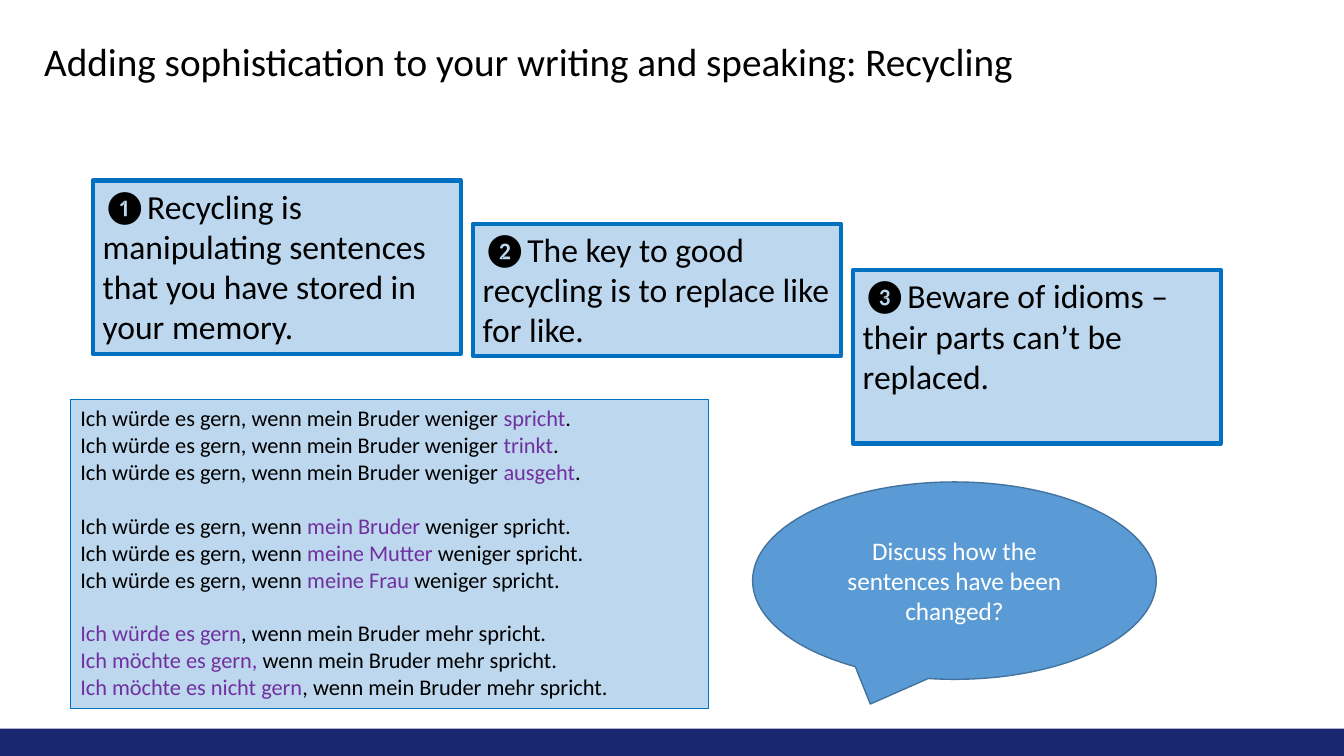
from pptx import Presentation
from pptx.dml.color import RGBColor
from pptx.enum import shapes, text
from pptx.util import Pt

COLORS = {"navy": "192771", "pale": "BDD7EE", "border": "0070C0", "bubble": "5B9BD5",
          "bubble_line": "43739E", "black": "000000", "white": "FFFFFF", "purple": "7030A0"}


def add_run(p, words, size, color="black"):
    r = p.add_run()
    r.text = words
    r.font.name = "Calibri"
    r.font.size = Pt(size)
    r.font.color.rgb = RGBColor.from_string(COLORS[color])


def add_box(kind, box, fill, line=None, width=0):
    """Add a flat preset shape with left-aligned text starting at the top."""
    sp = s.shapes.add_shape(kind, *[Pt(v) for v in box])
    sp.shadow.inherit = False
    sp.fill.solid()
    sp.fill.fore_color.rgb = RGBColor.from_string(COLORS[fill])
    if line:
        sp.line.color.rgb = RGBColor.from_string(COLORS[line])
        sp.line.width = Pt(width)
    else:
        sp.line.fill.background()
    tf = sp.text_frame
    tf.word_wrap = True
    tf.vertical_anchor = text.MSO_ANCHOR.TOP
    tf.paragraphs[0].alignment = text.PP_ALIGN.LEFT
    return tf


prs = Presentation()
prs.slide_width, prs.slide_height = Pt(960), Pt(540)
s = prs.slides.add_slide(prs.slide_layouts[6])
RECT = shapes.MSO_SHAPE.RECTANGLE

# Footer band and title
add_box(RECT, (0, 520.5, 960, 19.5), "navy")
tf = s.shapes.add_textbox(Pt(24.5), Pt(-0.7), Pt(847.5), Pt(92.9)).text_frame
tf.word_wrap = True
tf.vertical_anchor = text.MSO_ANCHOR.MIDDLE
p = tf.paragraphs[0]
p.line_spacing = 0.9
add_run(p, "Adding sophistication to your writing and speaking: Recycling", 28)

# Three staggered steps
steps = [
    (128.9, 123.8, "❶Recycling is manipulating sentences that you have stored in your memory."),
    (159.8, 94.5, "❷The key to good recycling is to replace like for like."),
    (193, 123.8, "❸Beware of idioms – their parts can’t be replaced."),
]
for i, (top, height, words) in enumerate(steps):
    tf = add_box(RECT, (66.2 + 271.5 * i, top, 263, height), "pale", "border", 3)
    add_run(tf.paragraphs[0], words, 24)

# Example sentences: text before, replaced part, text after
groups = [
    [("Ich würde es gern, wenn mein Bruder weniger ", verb, ".")
     for verb in ("spricht", "trinkt", "ausgeht")],
    [("Ich würde es gern, wenn ", person, "weniger spricht.")
     for person in ("mein Bruder ", "meine Mutter ", "meine Frau ")],
    [("", "Ich würde es gern", ", wenn mein Bruder mehr spricht."),
     ("", "Ich möchte es gern, ", "wenn mein Bruder mehr spricht."),
     ("", "Ich möchte es nicht gern", ", wenn mein Bruder mehr spricht.")],
]
tf = add_box(RECT, (50.3, 285.4, 456, 220.6), "pale", "border", 0.75)
for g, sentences in enumerate(groups):
    for n, (before, replaced, after) in enumerate(sentences):
        p = tf.paragraphs[0] if g == n == 0 else tf.add_paragraph()
        p.alignment = text.PP_ALIGN.LEFT
        if g and n == 0:
            p.space_before = Pt(19.2)
        if before:
            add_run(p, before, 16)
        add_run(p, replaced, 16, "purple")
        add_run(p, after, 16)

# Discussion bubble
tf = add_box(shapes.MSO_SHAPE.OVAL_CALLOUT, (537.6, 344.3, 288.3, 141), "bubble", "bubble_line", 1)
tf.vertical_anchor = text.MSO_ANCHOR.MIDDLE
p = tf.paragraphs[0]
p.alignment = text.PP_ALIGN.CENTER
add_run(p, "Discuss how the sentences have been changed?", 18, "white")

prs.save("out.pptx")
